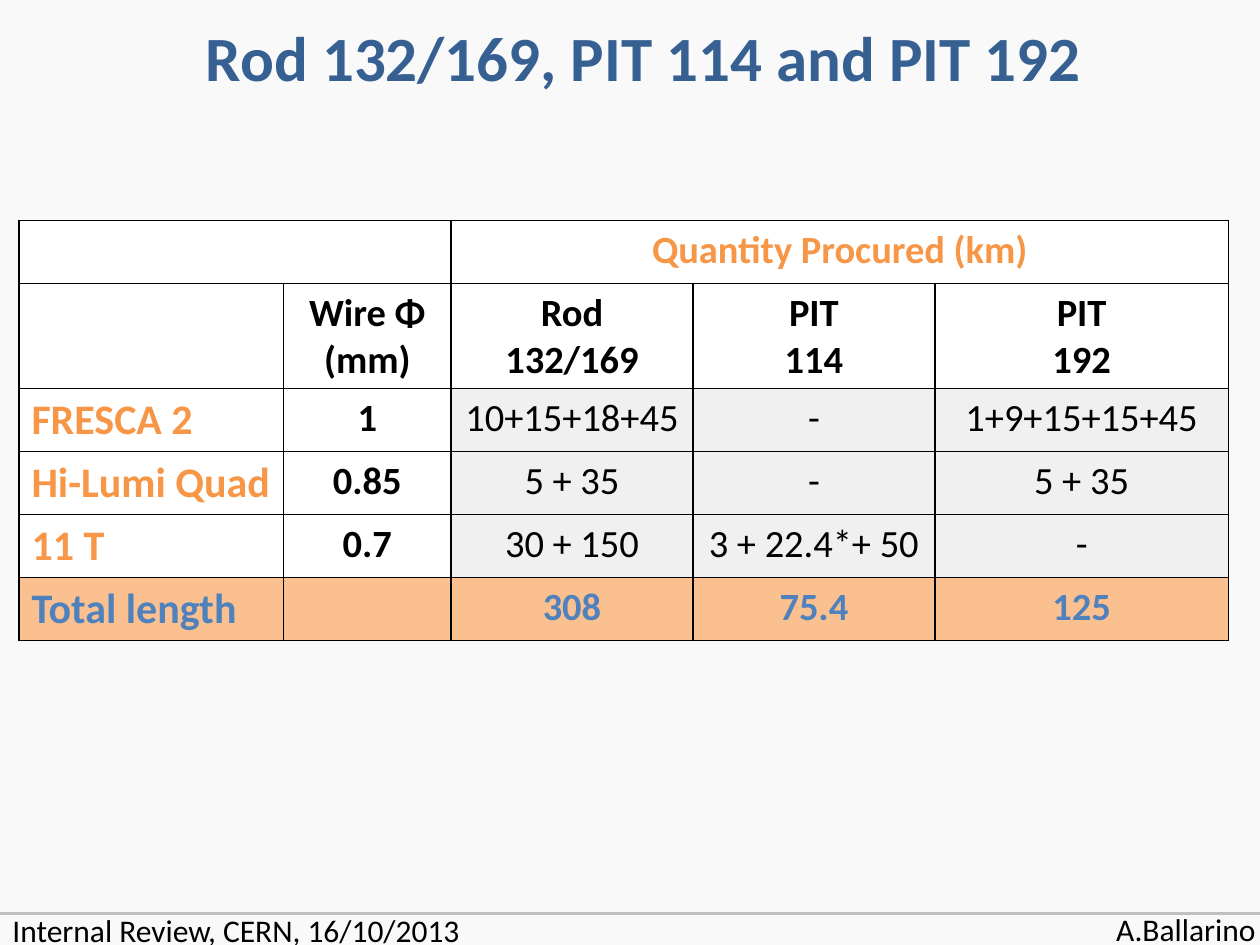
import pptx
import pptx.util
import pptx.dml.color
import pptx.enum.shapes
import pptx.enum.text
import pptx.oxml.ns
from lxml import etree

Inches, Pt = pptx.util.Inches, pptx.util.Pt
ALIGN = pptx.enum.text.PP_ALIGN
qn = pptx.oxml.ns.qn

# Content
TITLE = "Rod 132/169, PIT 114 and PIT 192"
FOOTER = [
    ("Internal Review, CERN, 16/10/2013", 0, 7.18, 3.79),
    ("A.Ballarino", 8.76, 7.17, 1.32),
]
ROWS = [
    ["", "", "Quantity Procured (km)", "", ""],
    ["", "Wire Φ\n(mm)", "Rod\n132/169", "PIT\n114", "PIT\n192"],
    ["FRESCA 2", "1", "10+15+18+45", "-", "1+9+15+15+45"],
    ["Hi-Lumi Quad", "0.85", "5 + 35", "-", "5 + 35"],
    ["11 T", "0.7", "30 + 150", "3 + 22.4*+ 50", "-"],
    ["Total length", "", "308", "75.4", "125"],
]
WIDTHS = [2.1, 1.33, 1.92, 1.92, 2.33]
HEIGHTS = [0.5, 0.83, 0.5, 0.5, 0.5, 0.5]
BLACK, WHITE, GREY = "000000", "FFFFFF", "D9D9D9"
ORANGE, PEACH, BLUE, NAVY = "F79646", "FAC090", "4F81BD", "376092"


def paint(color, code):
    color.rgb = pptx.dml.color.RGBColor.from_string(code)


def shade(fill, code):
    fill.solid()
    paint(fill.fore_color, code)


def write(frame, text, size, code, bold=False, align=ALIGN.LEFT):
    for n, line in enumerate(text.split("\n")):
        para = frame.add_paragraph() if n else frame.paragraphs[0]
        para.alignment = align
        run = para.add_run()
        run.text = line
        run.font.name = "Calibri"
        run.font.size = Pt(size)
        run.font.bold = bold
        paint(run.font.color, code)


def fade(node, share):
    """Set the opacity of the solid fill inside node, in percent."""
    color = node.find(".//" + qn("a:srgbClr"))
    etree.SubElement(color, qn("a:alpha")).set("val", str(share * 1000))


def frame_cell(cell):
    """Draw a 1 pt black border on all four sides."""
    props = cell._tc.get_or_add_tcPr()
    for n, side in enumerate(("a:lnL", "a:lnR", "a:lnT", "a:lnB")):
        line = etree.Element(qn(side), w=str(Pt(1)))
        solid = etree.SubElement(line, qn("a:solidFill"))
        etree.SubElement(solid, qn("a:srgbClr"), val=BLACK)
        props.insert(n, line)


def look(row, col):
    """Return fill, text colour, size and bold of a cell."""
    size = 22 if col else 24
    if row == len(ROWS) - 1:
        return PEACH, BLUE, size, True
    if row == 0 or col == 0:
        return WHITE, ORANGE, size, True
    if row == 1 or col == 1:
        return WHITE, BLACK, size, True
    return GREY, BLACK, size, False


deck = pptx.Presentation()
deck.slide_width, deck.slide_height = Inches(10), Inches(7.5)
slide = deck.slides.add_slide(deck.slide_layouts[6])
shapes = slide.shapes

# Background
shade(slide.background.fill, "F9F9F9")

# Footer
rule = shapes.add_connector(pptx.enum.shapes.MSO_CONNECTOR.STRAIGHT,
                            Inches(0), Inches(7.25), Inches(10), Inches(7.25))
paint(rule.line.color, "BFBFBF")
rule.line.width = Pt(2)
etree.SubElement(rule._element.spPr, qn("a:effectLst"))
for text, left, top, width in FOOTER:
    box = shapes.add_textbox(Inches(left), Inches(top), Inches(width), Inches(0.4))
    box.text_frame.word_wrap = False
    write(box.text_frame, text, 18, BLACK)

# Table
table = shapes.add_table(len(ROWS), len(WIDTHS), Inches(0.15), Inches(1.75),
                         Inches(sum(WIDTHS)), Inches(sum(HEIGHTS))).table
for column, width in zip(table.columns, WIDTHS):
    column.width = Inches(width)
for line, height in zip(table.rows, HEIGHTS):
    line.height = Inches(height)
for row, texts in enumerate(ROWS):
    for col, text in enumerate(texts):
        cell = table.cell(row, col)
        back, ink, size, bold = look(row, col)
        shade(cell.fill, back)
        if back == GREY:
            fade(cell._tc.tcPr, 27)
        frame_cell(cell)
        if text:
            write(cell.text_frame, text, size, ink, bold,
                  ALIGN.CENTER if col else ALIGN.LEFT)
for first, last in ((0, 1), (2, 4)):
    table.cell(0, first).merge(table.cell(0, last))

# Title
box = shapes.add_textbox(Inches(0.58), Inches(-0.36), Inches(9.06), Inches(1.61))
box.text_frame.word_wrap = True
box.text_frame.vertical_anchor = pptx.enum.text.MSO_ANCHOR.MIDDLE
write(box.text_frame, TITLE, 36, NAVY, True, ALIGN.CENTER)

deck.save("out.pptx")
